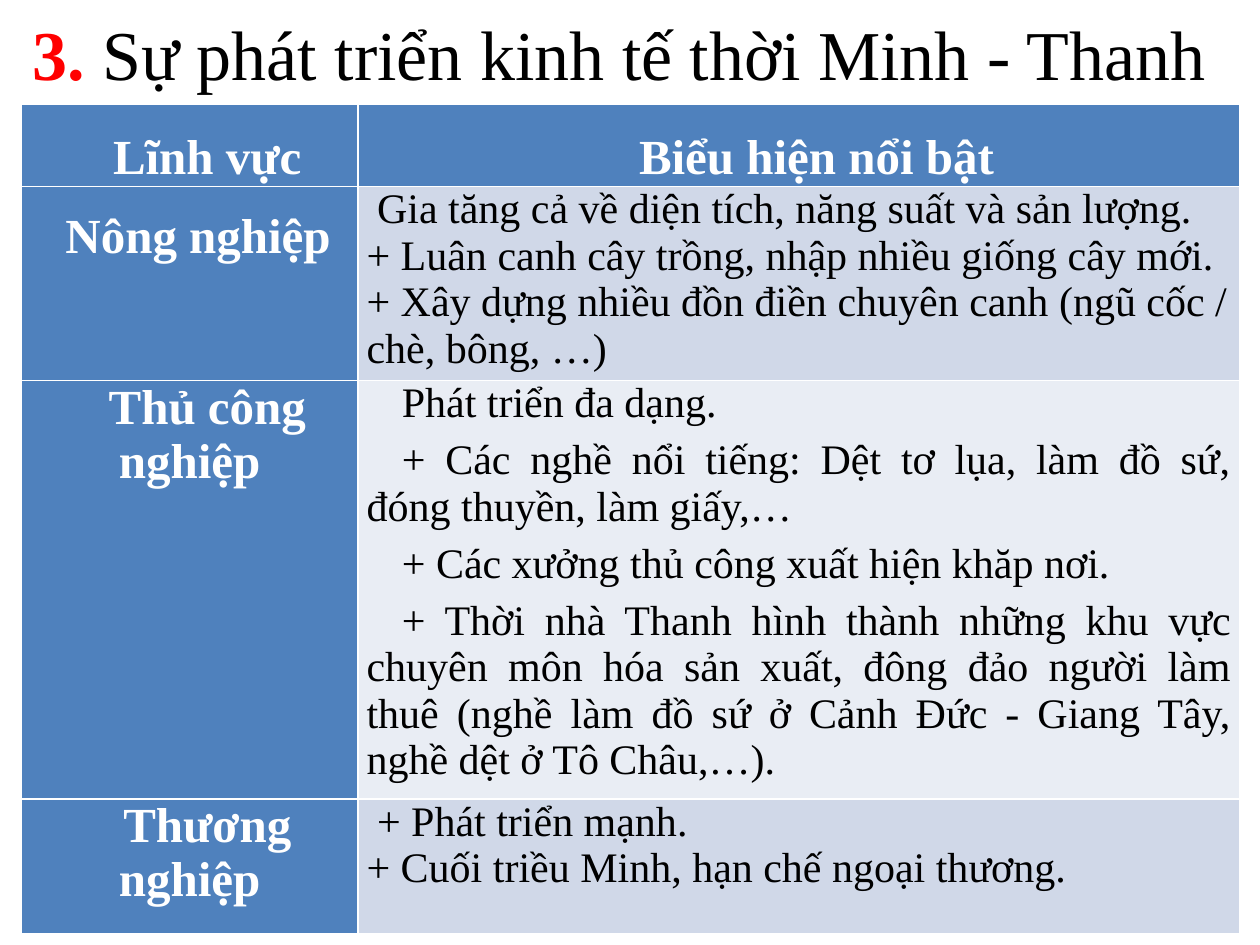
from pptx import Presentation
from pptx.dml.color import RGBColor
from pptx.enum.text import MSO_ANCHOR, PP_ALIGN
from pptx.util import Inches, Pt

FONT = "Times New Roman"
COLORS = {"accent": "4F81BD", "band_dark": "D0D8E8", "band_light": "E9EDF4",
          "white": "FFFFFF", "black": "000000", "red": "FF0000"}
COLUMN_WIDTHS = [2.67, 7]
ROW_HEIGHTS = [0.65, 1.54, 3.32, 1.07]

HEADINGS = ["Lĩnh vực", "Biểu hiện nổi bật"]
# Field, its alignment and line spacing, its details, whether these are indented
FIELDS = [
    ("Nông nghiệp", PP_ALIGN.JUSTIFY, 1.44, [
        "\u00a0Gia tăng cả về diện tích, năng suất và sản lượng.",
        "+ Luân canh cây trồng, nhập nhiều giống cây mới.",
        "+ Xây dựng nhiều đồn điền chuyên canh (ngũ cốc / chè, bông, …)",
    ], False),
    ("Thủ công nghiệp", PP_ALIGN.CENTER, None, [
        "Phát triển đa dạng.",
        "+ Các nghề nổi tiếng: Dệt tơ lụa, làm đồ sứ, đóng thuyền, làm giấy,…",
        "+ Các xưởng thủ công xuất hiện khăp nơi.",
        "+ Thời nhà Thanh hình thành những khu vực chuyên môn hóa sản xuất, "
        "đông đảo người làm thuê (nghề làm đồ sứ ở Cảnh Đức - Giang Tây, "
        "nghề dệt ở Tô Châu,…).",
    ], True),
    ("Thương nghiệp", PP_ALIGN.CENTER, None, [
        "\u00a0+ Phát triển mạnh.",
        "+ Cuối triều Minh, hạn chế ngoại thương.",
    ], False),
]


def color(name):
    return RGBColor.from_string(COLORS[name])


def style_font(font, size, color_name, bold=False):
    font.name = FONT
    font.size = Pt(size)
    font.bold = bold
    font.color.rgb = color(color_name)


def indent_first_line(paragraph):
    properties = paragraph._p.get_or_add_pPr()
    properties.set("marL", "0")
    properties.set("indent", str(Inches(0.28)))
    paragraph.space_before = Pt(6)


def prepare_cell(cell, fill_name, anchor=MSO_ANCHOR.TOP):
    cell.fill.solid()
    cell.fill.fore_color.rgb = color(fill_name)
    cell.margin_left = cell.margin_right = Inches(0.07)
    cell.margin_top = cell.margin_bottom = 0
    cell.vertical_anchor = anchor


def fill_label(cell, text, alignment=PP_ALIGN.CENTER, line_spacing=None,
               anchor=MSO_ANCHOR.TOP):
    prepare_cell(cell, "accent", anchor)
    paragraph = cell.text_frame.paragraphs[0]
    paragraph.text = text
    paragraph.alignment = alignment
    paragraph.line_spacing = line_spacing
    indent_first_line(paragraph)
    style_font(paragraph.font, 28, "white", bold=True)
    return paragraph


def fill_details(cell, lines, fill_name, indented):
    prepare_cell(cell, fill_name)
    cell.text = "\n".join(lines)
    for paragraph in cell.text_frame.paragraphs:
        style_font(paragraph.font, 24, "black")
        if indented:
            paragraph.alignment = PP_ALIGN.JUSTIFY
            indent_first_line(paragraph)


def add_title(slide):
    title = slide.shapes.title
    title.left, title.top = 0, 0
    title.width, title.height = Inches(9.83), Inches(0.83)
    title.text_frame.vertical_anchor = MSO_ANCHOR.MIDDLE
    paragraph = title.text_frame.paragraphs[0]
    paragraph.alignment = PP_ALIGN.CENTER
    for text, color_name, bold in [
            ("3. ", "red", True),
            ("Sự phát triển kinh tế thời Minh - Thanh", "black", False)]:
        run = paragraph.add_run()
        run.text = text
        style_font(run.font, 40, color_name, bold)


def add_economy_table(slide):
    table = slide.shapes.add_table(
        len(ROW_HEIGHTS), len(COLUMN_WIDTHS), Inches(0.17), Inches(0.83),
        Inches(sum(COLUMN_WIDTHS)), Inches(sum(ROW_HEIGHTS))).table
    table.first_col = True
    for column, width in zip(table.columns, COLUMN_WIDTHS):
        column.width = Inches(width)
    for row, height in zip(table.rows, ROW_HEIGHTS):
        row.height = Inches(height)

    # Header row
    for index, heading in enumerate(HEADINGS):
        paragraph = fill_label(table.cell(0, index), heading, line_spacing=1.44,
                               anchor=MSO_ANCHOR.MIDDLE)
        paragraph.space_after = Pt(6)

    # One row for each field, in alternating bands
    for row, (field, alignment, spacing, lines, indented) in enumerate(FIELDS, 1):
        fill_label(table.cell(row, 0), field, alignment, spacing)
        band = "band_dark" if row % 2 else "band_light"
        fill_details(table.cell(row, 1), lines, band, indented)


def main():
    presentation = Presentation()
    presentation.slide_width = Inches(10)
    presentation.slide_height = Inches(7.5)
    slide = presentation.slides.add_slide(presentation.slide_layouts[5])
    add_title(slide)
    add_economy_table(slide)
    presentation.save("out.pptx")


main()
